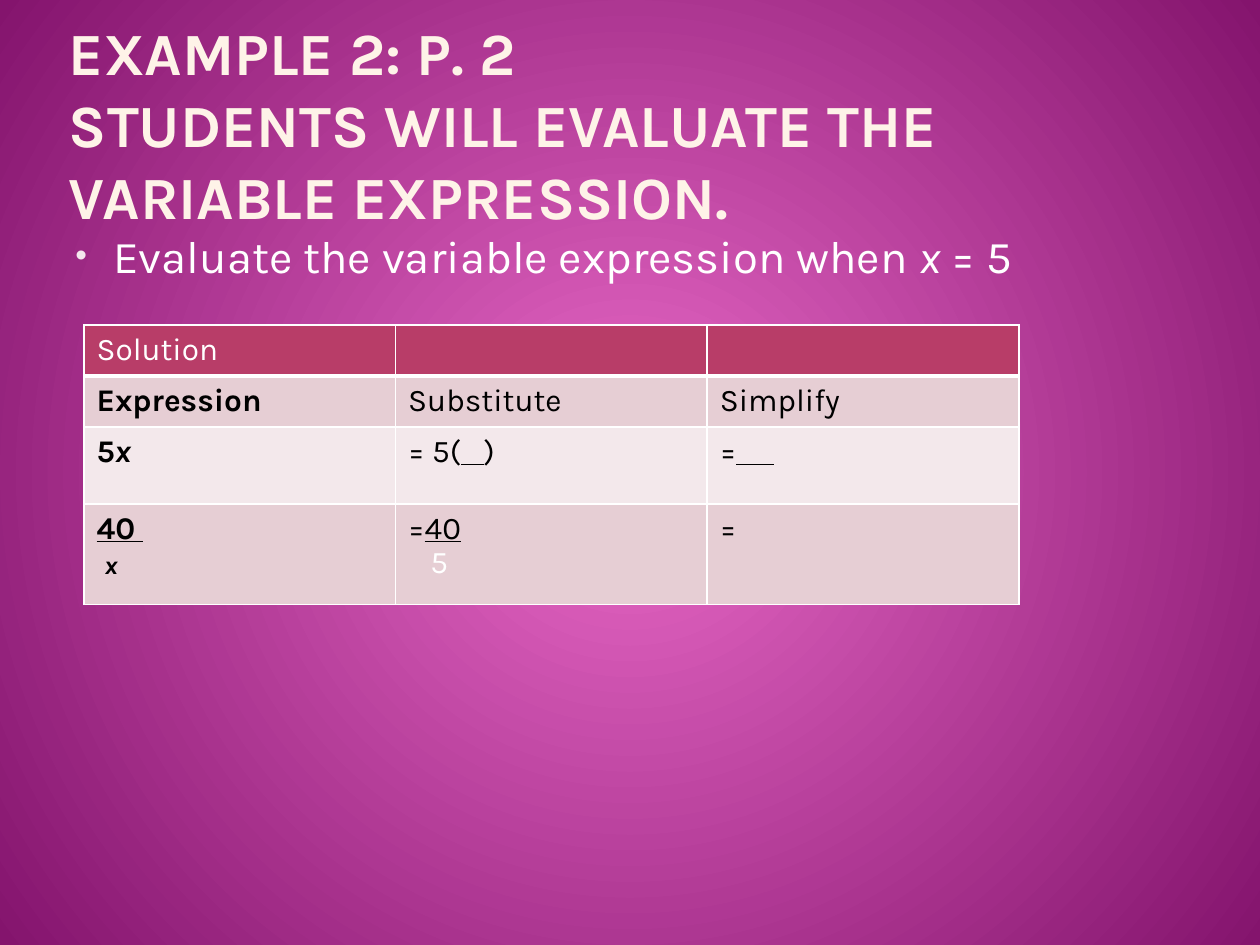
from lxml import etree
from pptx import Presentation
from pptx.dml.color import RGBColor
from pptx.enum.text import MSO_ANCHOR, MSO_AUTO_SIZE
from pptx.oxml.ns import qn
from pptx.util import Emu, Pt

PX = 914400 // 126
FONT = "Karla"
BOTTOM = MSO_ANCHOR.BOTTOM
TOP = MSO_ANCHOR.TOP
GROW = MSO_AUTO_SIZE.SHAPE_TO_FIT_TEXT
FIXED = MSO_AUTO_SIZE.NONE
WHITE = RGBColor(0xFF, 0xFF, 0xFF)
BLACK = RGBColor(0, 0, 0)
CREAM = RGBColor(0xFE, 0xF3, 0xE8)
BLUSH = RGBColor(0xF4, 0xE7, 0xED)
PINK = RGBColor(0xE8, 0x69, 0xC7)
PLUM = RGBColor(0x84, 0x14, 0x6D)
ROSE = RGBColor(0xB8, 0x3D, 0x68)
DARK = RGBColor(0xE6, 0xCE, 0xD4)
LIGHT = RGBColor(0xF3, 0xE8, 0xEB)

BOLD = {"bold": True}
LINED = {"under": True}
HEAD = {"size": 34.2, "color": CREAM, "bold": True}
LEAD = {"size": 26, "color": WHITE}
POWER = {"bold": True, "italic": True, "size": 25, "base": 30}
ROWS = [
    (51, ROSE, [[[("Solution", {"color": WHITE})]], [], []]),
    (51, DARK, [[[("Expression", BOLD)]], [[("Substitute", {})]],
                [[("Simplify", {})]]]),
    (77, LIGHT, [[[("5", BOLD), ("x", {"bold": True, "italic": True})]],
                 [[("= 5(", {}), ("   ", LINED), (")", {})]],
                 [[("=", {}), ("     ", LINED)]]]),
    (100, DARK, [[[("40 ", {"bold": True, "under": True})],
                  [(" ", BOLD), ("x", POWER)]],
                 [[("=", {}), ("40", LINED)]],
                 [[("=", {})]]]),
]


def px(*sizes):
    return [Emu(size * PX) for size in sizes]


def add(parent, tag, **attrs):
    node = etree.SubElement(parent, qn(tag))
    for key, value in attrs.items():
        node.set(key, str(value))
    return node


def write(para, text, size=18, color=BLACK, bold=False, italic=False,
          under=False, base=0):
    run = para.add_run()
    run.text = text
    font = run.font
    font.name, font.size, font.color.rgb = FONT, Pt(size), color
    font.bold, font.italic, font.underline = bold, italic, under
    if base:
        run._r.get_or_add_rPr().set("baseline", str(base * 1000))


def box(slide, left, top, width, height, anchor=TOP, fit=FIXED):
    frame = slide.shapes.add_textbox(*px(left, top, width, height)).text_frame
    frame.word_wrap = True
    frame.auto_size = fit
    frame.vertical_anchor = anchor
    return frame


def bullet(para):
    props = para._p.get_or_add_pPr()
    indent = px(38)[0]
    props.set("marL", str(indent))
    props.set("indent", str(-indent))
    add(add(props, "a:buClr"), "a:srgbClr", val=BLUSH)
    add(props, "a:buSzPct", val=73000)
    add(props, "a:buFont", typeface="Arial")
    add(props, "a:buChar", char="•")


def border(cell, head):
    props = cell._tc.get_or_add_tcPr()
    for side in "LRTB":
        width = 3 if head and side == "B" else 1
        line = add(props, f"a:ln{side}", w=Pt(width))
        add(add(line, "a:solidFill"), "a:srgbClr", val=WHITE)


def backdrop(slide):
    fill = slide.background.fill
    fill.gradient()
    for stop, color, place in zip(fill.gradient_stops, (PINK, PLUM), (0, 1)):
        stop.color.rgb = color
        stop.position = place
    grad = slide._element.find(f".//{qn('a:gradFill')}")
    grad.remove(grad.find(qn("a:lin")))
    path = add(grad, "a:path", path="circle")
    add(path, "a:fillToRect", l=50000, t=50000, r=50000, b=50000)


def grid(slide, left, top, width):
    high = sum(row[0] for row in ROWS)
    table = slide.shapes.add_table(
        len(ROWS), 3, *px(left, top, width, high)).table
    table.horz_banding = False
    for i, (tall, shade, cells) in enumerate(ROWS):
        table.rows[i].height = px(tall)[0]
        for j, lines in enumerate(cells):
            cell = table.cell(i, j)
            border(cell, i == 0)
            cell.fill.solid()
            cell.fill.fore_color.rgb = shade
            frame = cell.text_frame
            for k, runs in enumerate(lines):
                para = frame.add_paragraph() if k else frame.paragraphs[0]
                for text, style in runs:
                    write(para, text, **style)


def main():
    deck = Presentation()
    deck.slide_width, deck.slide_height = px(1260, 945)
    slide = deck.slides.add_slide(deck.slide_layouts[6])
    backdrop(slide)

    title = box(slide, 63, 73, 998, 158, anchor=BOTTOM)
    title.margin_left = title.margin_right = px(6)[0]
    title.margin_top = title.margin_bottom = 0
    para = title.paragraphs[0]
    write(para, "EXAMPLE 2: P. 2", **HEAD)
    para.add_line_break()
    write(para, "STUDENTS WILL EVALUATE THE VARIABLE EXPRESSION.", **HEAD)

    para = box(slide, 63, 222, 998, 668).paragraphs[0]
    bullet(para)
    write(para, "Evaluate the variable expression when ", **LEAD)
    write(para, "x", italic=True, **LEAD)
    write(para, " = 5", **LEAD)

    grid(slide, 84, 325, 935)
    five = box(slide, 418, 536, 42, 50, fit=GROW)
    write(five.paragraphs[0], "5", color=WHITE)
    deck.save("out.pptx")


if __name__ == "__main__":
    main()
